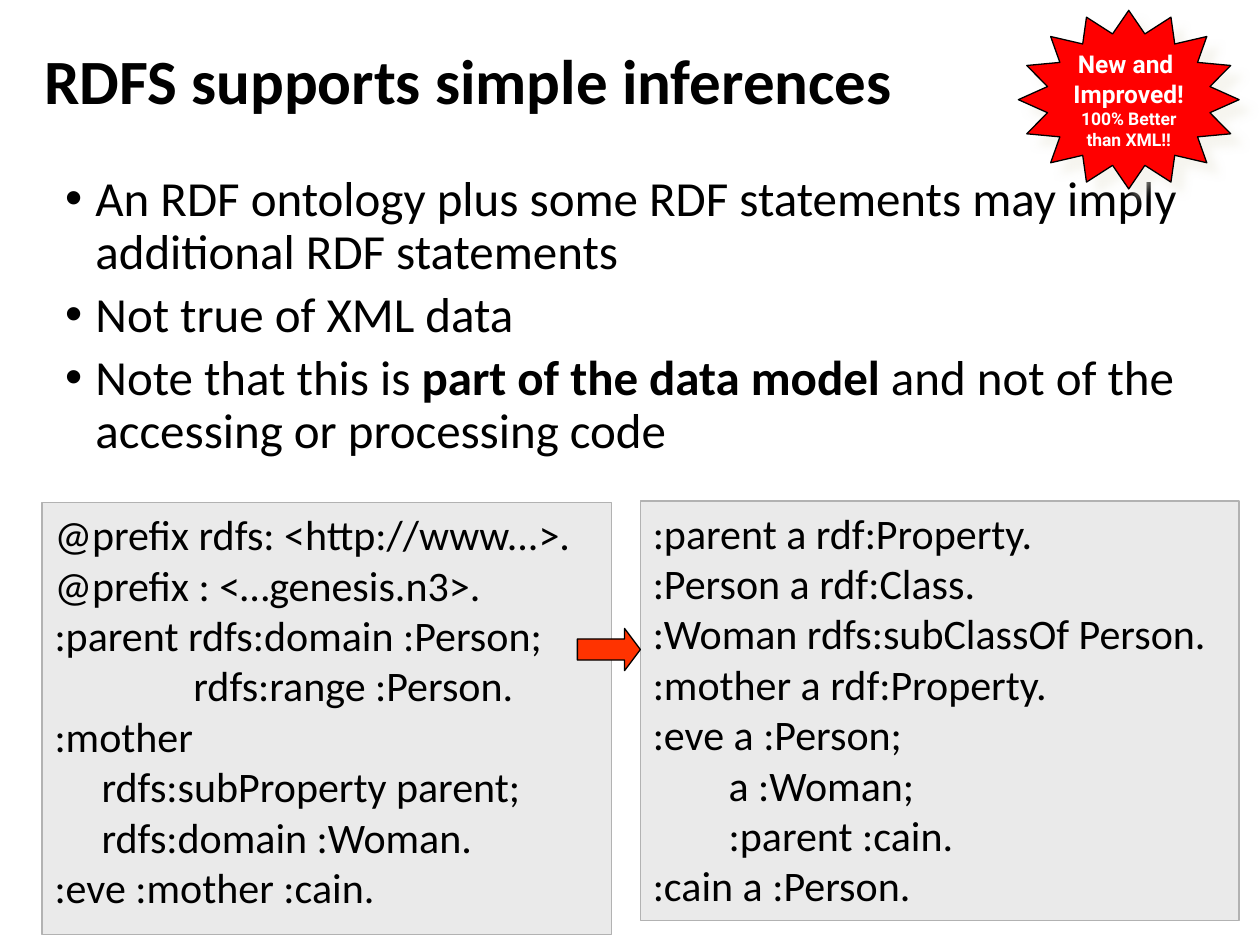
from dataclasses import dataclass

from lxml import etree
from pptx import Presentation
from pptx.dml.color import RGBColor
from pptx.enum import shapes, text
from pptx.oxml import ns
from pptx.util import Cm, Pt

BLACK = RGBColor(0x00, 0x00, 0x00)
WHITE = RGBColor(0xFF, 0xFF, 0xFF)
PANEL_GRAY = RGBColor(0xEA, 0xEA, 0xEA)
BORDER_GRAY = RGBColor(0xB2, 0xB2, 0xB2)
ARROW_RED = RGBColor(0xFF, 0x33, 0x00)
BURST_RED = RGBColor(0xFF, 0x00, 0x00)
SHADOW_BEIGE = RGBColor(0xEE, 0xEC, 0xE1)


@dataclass(frozen=True)
class Box:
    left: float
    top: float
    width: float
    height: float

    def lengths(self) -> tuple:
        return Cm(self.left), Cm(self.top), Cm(self.width), Cm(self.height)


@dataclass(frozen=True)
class CodeLine:
    code: str
    indent: float = 0


@dataclass(frozen=True)
class CodePanel:
    box: Box
    lines: tuple
    wrap: bool


def write(paragraph, content: str, *, size: float, color=BLACK, bold=False,
          font="Calibri", align=text.PP_ALIGN.LEFT) -> None:
    paragraph.alignment = align
    for number, line in enumerate(content.split("\n")):
        if number:
            paragraph.add_line_break()
        run = paragraph.add_run()
        run.text = line
        run.font.size = Pt(size)
        run.font.name = font
        run.font.bold = bold
        run.font.color.rgb = color


def next_paragraph(frame, number: int):
    return frame.add_paragraph() if number else frame.paragraphs[0]


def set_indent(paragraph, left: float, first: float = 0) -> None:
    properties = paragraph._p.get_or_add_pPr()
    properties.set("marL", str(Cm(left)))
    properties.set("indent", str(Cm(first)))


def place(placeholder, box: Box):
    (placeholder.left, placeholder.top,
     placeholder.width, placeholder.height) = box.lengths()
    frame = placeholder.text_frame
    frame.auto_size = text.MSO_AUTO_SIZE.NONE
    return frame


def draw_shape(slide, kind, box: Box, fill: RGBColor, line: RGBColor):
    shape = slide.shapes.add_shape(kind, *box.lengths())
    shape.fill.solid()
    shape.fill.fore_color.rgb = fill
    shape.line.color.rgb = line
    shape.line.width = Pt(0.75)
    shape.shadow.inherit = False
    return shape


def draw_panel(slide, panel: CodePanel) -> None:
    shape = draw_shape(slide, shapes.MSO_SHAPE.RECTANGLE, panel.box,
                       PANEL_GRAY, BORDER_GRAY)
    frame = shape.text_frame
    frame.word_wrap = panel.wrap
    frame.vertical_anchor = text.MSO_ANCHOR.TOP
    for number, line in enumerate(panel.lines):
        paragraph = next_paragraph(frame, number)
        set_indent(paragraph, line.indent)
        write(paragraph, line.code, size=24)


def add_shadow(shape, color: RGBColor) -> None:
    effects = shape._element.spPr.find(ns.qn("a:effectLst"))
    shadow = etree.SubElement(
        effects, ns.qn("a:outerShdw"), blurRad=str(Pt(5)), dist=str(Pt(8.5)),
        dir="2700000", algn="ctr", rotWithShape="0")
    tint = etree.SubElement(shadow, ns.qn("a:srgbClr"), val=str(color))
    etree.SubElement(tint, ns.qn("a:alpha"), val="50000")


def draw_bullets(frame, bullets: tuple) -> None:
    for number, pieces in enumerate(bullets):
        paragraph = next_paragraph(frame, number)
        paragraph.line_spacing = 0.9
        paragraph.space_before = Pt(5.6)
        set_indent(paragraph, 0.61, -0.61)
        bullet = etree.SubElement(paragraph._p.get_or_add_pPr(), ns.qn("a:buChar"))
        bullet.set("char", "•")
        for content, bold in pieces:
            write(paragraph, content, size=28, bold=bold)


def draw_burst(slide) -> None:
    burst = draw_shape(slide, shapes.MSO_SHAPE.STAR_16_POINT,
                       Box(20.53, 0.21, 4.45, 3.6), BURST_RED, BLACK)
    burst.adjustments[0] = 0.375
    add_shadow(burst, SHADOW_BEIGE)
    frame = burst.text_frame
    frame.word_wrap = False
    frame.vertical_anchor = text.MSO_ANCHOR.MIDDLE
    slogans = (("New and \nImproved!", 14), ("100% Better\nthan XML!!", 10))
    for number, (slogan, size) in enumerate(slogans):
        write(next_paragraph(frame, number), slogan, size=size, color=WHITE,
              bold=True, font="Roboto", align=text.PP_ALIGN.CENTER)


BULLETS = (
    (("An RDF ontology plus some RDF statements may imply "
      "additional RDF statements", False),),
    (("Not true of XML data", False),),
    (("Note that this is ", False), ("part of the data model", True),
     (" and not of the accessing or processing code", False)),
)

STATEMENTS = CodePanel(Box(0.85, 10.13, 11.48, 8.71), (
    CodeLine("@prefix rdfs: <http://www...>."),
    CodeLine("@prefix : <…genesis.n3>."),
    CodeLine(":parent rdfs:domain :Person;"),
    CodeLine("rdfs:range :Person.", 2.8),
    CodeLine(":mother"),
    CodeLine("rdfs:subProperty parent;", 0.95),
    CodeLine("rdfs:domain :Woman.", 0.95),
    CodeLine(":eve :mother :cain."),
), wrap=False)

INFERENCES = CodePanel(Box(12.91, 10.1, 12.07, 8.46), (
    CodeLine(":parent a rdf:Property."),
    CodeLine(":Person a rdf:Class."),
    CodeLine(":Woman rdfs:subClassOf Person."),
    CodeLine(":mother a rdf:Property."),
    CodeLine(":eve a :Person;"),
    CodeLine("a :Woman;", 1.53),
    CodeLine(":parent :cain.", 1.53),
    CodeLine(":cain a :Person."),
), wrap=True)


def main() -> None:
    deck = Presentation()
    deck.slide_width, deck.slide_height = Cm(25.4), Cm(19.05)
    slide = deck.slides.add_slide(deck.slide_layouts[1])

    heading = place(slide.shapes.title, Box(0.64, 0.43, 20.11, 2.33))
    heading.vertical_anchor = text.MSO_ANCHOR.MIDDLE
    write(heading.paragraphs[0], "RDFS supports simple inferences",
          size=36, bold=True)
    draw_bullets(place(slide.placeholders[1], Box(1.06, 3.39, 23.28, 5.5)), BULLETS)

    for panel in (STATEMENTS, INFERENCES):
        draw_panel(slide, panel)
    arrow = draw_shape(slide, shapes.MSO_SHAPE.RIGHT_ARROW,
                       Box(11.64, 12.67, 1.27, 0.85), ARROW_RED, BLACK)
    arrow.adjustments[1] = 0.375
    draw_burst(slide)

    deck.save("out.pptx")


if __name__ == "__main__":
    main()
